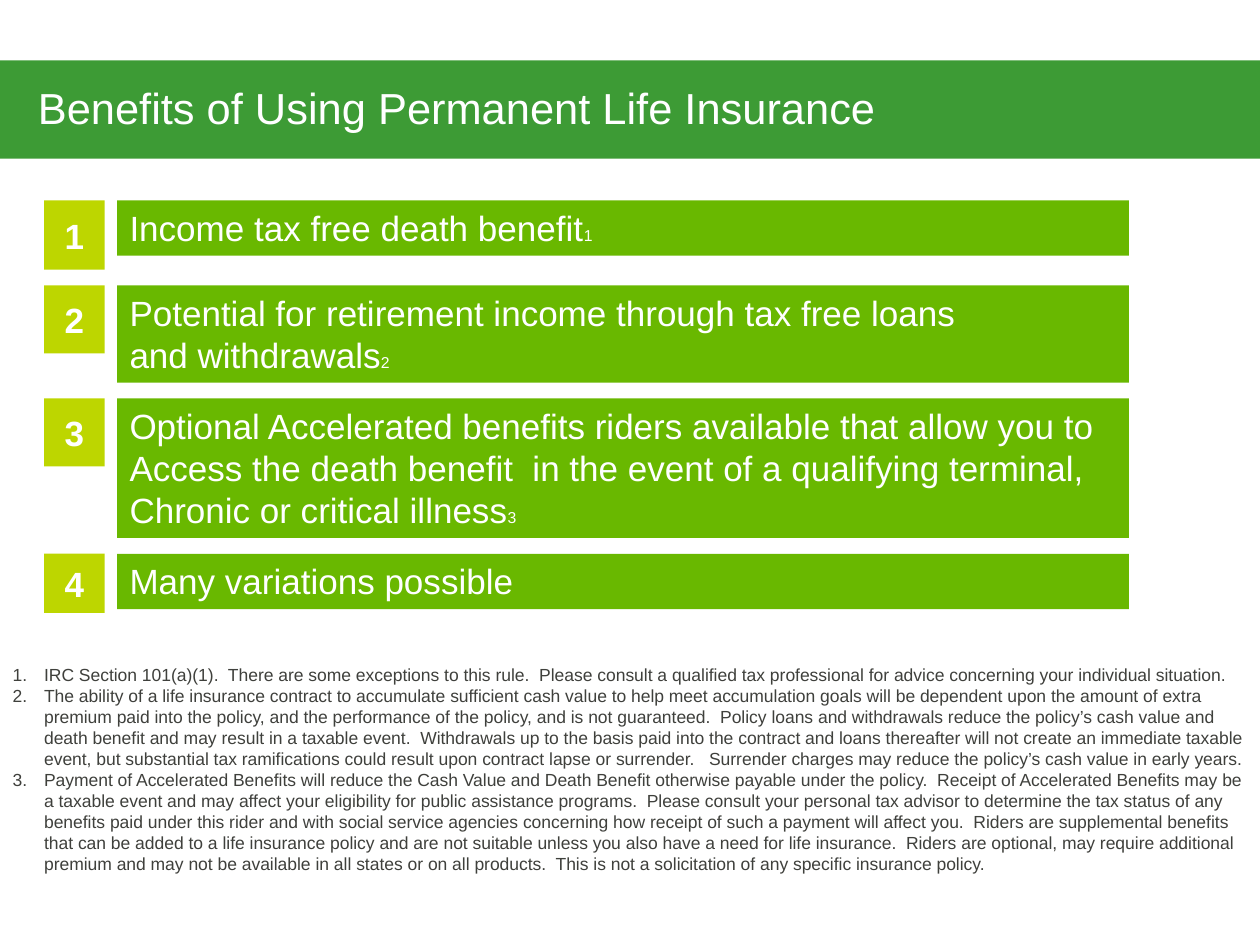
from lxml.etree import SubElement as Sub
from pptx import Presentation
from pptx.dml.color import RGBColor as Rgb
from pptx.enum.shapes import MSO_SHAPE as Kind
from pptx.enum.text import MSO_ANCHOR as Anchor, MSO_AUTO_SIZE as Fit, PP_ALIGN as Align
from pptx.oxml.ns import qn
from pptx.util import Inches, Pt

COLORS = {"band": "3D9B35", "bar": "69B800", "tag": "BDD600",
          "white": "FFFFFF", "ink": "3F403C"}

TITLE = "Benefits of Using Permanent Life Insurance"

# Each benefit: lines of text, footnote mark, height of its number tag
BENEFITS = [
    (["Income tax free death benefit"], "1", 5.5),
    (["Potential for retirement income through tax free loans",
      "and withdrawals"], "2", 5.4),
    (["Optional Accelerated benefits riders available that allow you to",
      "Access the death benefit  in the event of a qualifying terminal,",
      "Chronic or critical illness"], "3", 5.4),
    (["Many variations possible"], "", 4.7),
]

NOTES = [
    "IRC Section 101(a)(1).  There are some exceptions to this rule.  "
    "Please consult a qualified tax professional for advice concerning "
    "your individual situation.",
    "The ability of a life insurance contract to accumulate sufficient cash "
    "value to help meet accumulation goals will be dependent upon the amount "
    "of extra premium paid into the policy, and the performance of the "
    "policy, and is not guaranteed.  Policy loans and withdrawals reduce the "
    "policy’s cash value and death benefit and may result in a taxable "
    "event.  Withdrawals up to the basis paid into the contract and loans "
    "thereafter will not create an immediate taxable event, but substantial "
    "tax ramifications could result upon contract lapse or surrender.   "
    "Surrender charges may reduce the policy’s cash value in early years.",
    "Payment of Accelerated Benefits will reduce the Cash Value and Death "
    "Benefit otherwise payable under the policy.  Receipt of Accelerated "
    "Benefits may be a taxable event and may affect your eligibility for "
    "public assistance programs.  Please consult your personal tax advisor "
    "to determine the tax status of any benefits paid under this rider and "
    "with social service agencies concerning how receipt of such a payment "
    "will affect you.  Riders are supplemental benefits that can be added to "
    "a life insurance policy and are not suitable unless you also have a "
    "need for life insurance.  Riders are optional, may require additional "
    "premium and may not be available in all states or on all products.  "
    "This is not a solicitation of any specific insurance policy.",
]


class Deck:
    """Style and current slide; lengths are cells of a 100 by 75 grid."""
    face = "Arial"
    cell = Inches(0.1)

    def __init__(self):
        self.show = Presentation()
        self.show.slide_width = 100 * self.cell
        self.show.slide_height = 75 * self.cell
        self.slide = self.show.slides.add_slide(self.show.slide_layouts[1])

    def grid(self, *cells):
        return [round(n * self.cell) for n in cells]

    def place(self, shape, *box):
        shape.left, shape.top, shape.width, shape.height = self.grid(*box)

    def paint(self, shape, color):
        shape.fill.solid()
        shape.fill.fore_color.rgb = Rgb.from_string(COLORS[color])

    def style(self, para, size, color="white", bold=False):
        font = para.font
        font.name, font.size, font.bold = self.face, Pt(size), bold
        font.color.rgb = Rgb.from_string(COLORS[color])

    def title(self, text, *box):
        shape = self.slide.shapes.title
        self.place(shape, *box)
        self.paint(shape, "band")
        frame = shape.text_frame
        frame.text = text
        frame.auto_size = Fit.NONE
        frame.vertical_anchor = Anchor.BOTTOM
        frame.margin_left, frame.margin_right = self.grid(3, 3)
        frame.margin_top, frame.margin_bottom = self.grid(2, 2)
        para = frame.paragraphs[0]
        para.alignment, para.line_spacing = Align.LEFT, 0.9
        self.style(para, 24.8)

    def block(self, lines, color, *box, align=Align.LEFT,
              anchor=Anchor.TOP, bold=False):
        shape = self.slide.shapes.add_shape(Kind.RECTANGLE, *self.grid(*box))
        shape.shadow.inherit = False
        shape.line.fill.background()
        self.paint(shape, color)
        frame = shape.text_frame
        frame.vertical_anchor = anchor
        frame.text = "\n".join(lines)
        for para in frame.paragraphs:
            para.alignment = align
            self.style(para, 20, bold=bold)
        return frame

    def bar(self, lines, mark, *box):
        frame = self.block(lines, "bar", *box)
        if mark:
            run = frame.paragraphs[-1].add_run()
            run.text, run.font.size = mark, Pt(9)

    def tag(self, text, *box):
        self.block([text], "tag", *box, align=Align.CENTER,
                   anchor=Anchor.MIDDLE, bold=True)

    def notes(self, items, *box):
        shape = self.slide.placeholders[1]
        self.place(shape, *box)
        frame = shape.text_frame
        frame.text = "\n".join(items)
        frame.auto_size = Fit.NONE
        indent = Inches(0.25)
        for para in frame.paragraphs:
            para.space_before = Pt(0)
            props = para._p.get_or_add_pPr()
            props.set("marL", str(indent))
            props.set("indent", str(-indent))
            Sub(props, qn("a:buFont"), typeface="+mj-lt")
            Sub(props, qn("a:buAutoNum"), type="arabicPeriod")
            self.style(para, 10, "ink")

    def save(self):
        self.show.save("out.pptx")


def main():
    deck = Deck()

    # Title band
    deck.title(TITLE, 0, 4.8, 100, 7.8)

    # Numbered benefits: each row starts below the taller of bar and tag
    top, gap = 15.9, 1.25
    for num, (lines, mark, tall) in enumerate(BENEFITS, 1):
        high = 1.05 + 3.34 * len(lines)
        deck.bar(lines, mark, 9.3, top, 80.3, high)
        deck.tag(str(num), 3.5, top, 4.8, tall)
        top += max(high, tall) + gap

    # Footnotes
    deck.notes(NOTES, 0, 52.2, 100, 19.5)
    deck.save()


if __name__ == "__main__":
    main()
